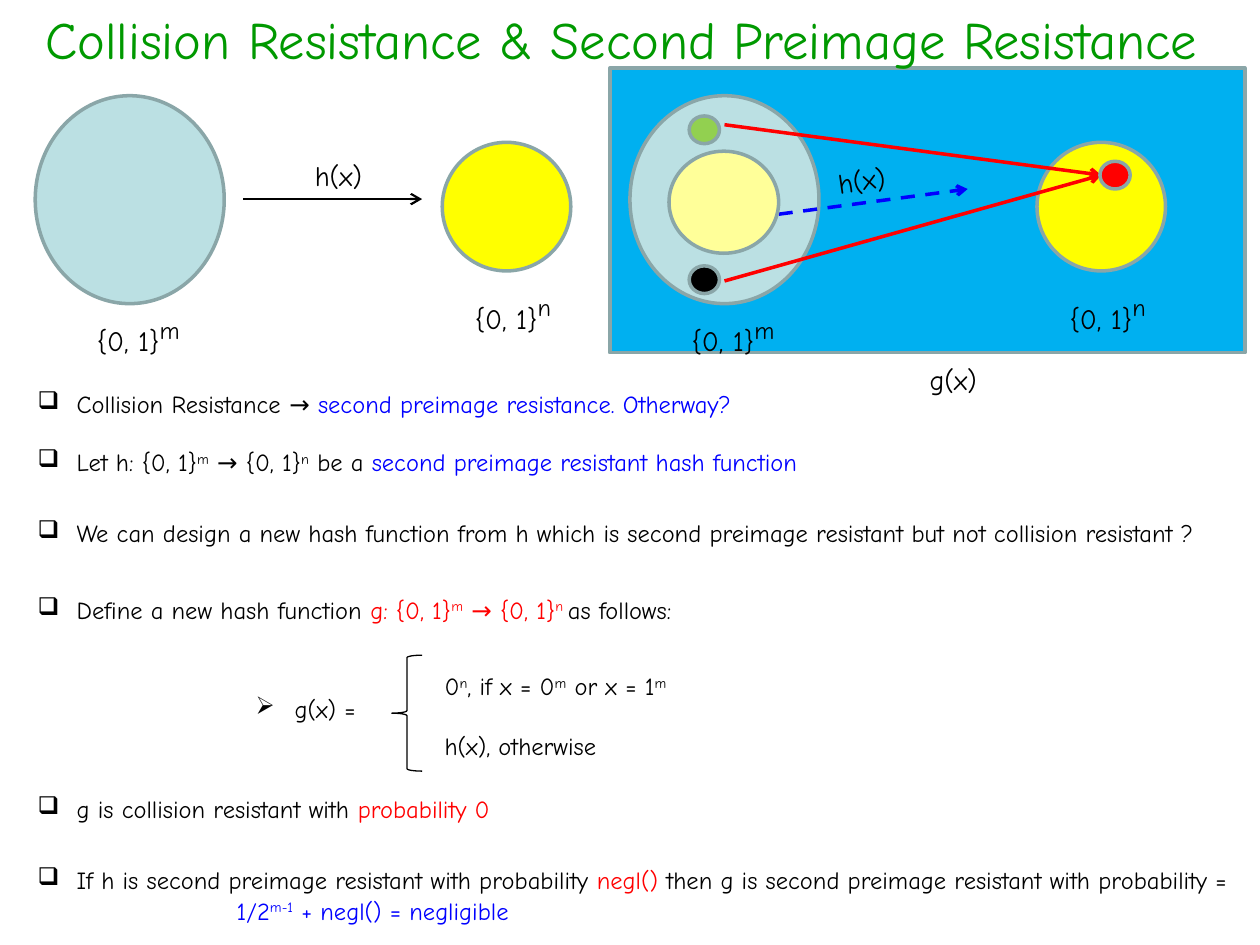
from lxml import etree
from pptx import Presentation
from pptx import util as u
from pptx.dml.color import RGBColor
from pptx.enum import dml, shapes, text
from pptx.oxml.ns import qn

color = RGBColor.from_string
BLACK, BLUE, RED, GREEN = "000000", "0000FF", "FF0000", "009900"
EDGE, PALE, YELLOW = "8AA6A8", "BBE0E3", "FFFF00"
OVAL = shapes.MSO_SHAPE.OVAL

deck = Presentation()
deck.slide_width, deck.slide_height = u.Inches(10), u.Inches(7.5)
page = deck.slides.add_slide(deck.slide_layouts[6])


def add_shape(kind, area, fill, edge=EDGE, width=2):
    shape = page.shapes.add_shape(kind, *map(u.Inches, area))
    shape.shadow.inherit = False
    if fill:
        shape.fill.solid()
        shape.fill.fore_color.rgb = color(fill)
    else:
        shape.fill.background()
    shape.line.color.rgb = color(edge)
    shape.line.width = u.Pt(width)


def add_text(area, parts, size=14, raised=None, bullet=None):
    """Parts are (wording, colour) pairs; wording between ^ marks is superscript."""
    box = page.shapes.add_textbox(*map(u.Inches, area))
    box.text_frame.word_wrap = True
    para = box.text_frame.paragraphs[0]
    if bullet:
        props = para._p.get_or_add_pPr()
        props.set("marL", str(u.Inches(0.31)))
        props.set("indent", str(-u.Inches(0.31)))
        etree.SubElement(props, qn("a:buChar")).set("char", bullet)
    for wording, tint in parts:
        for i, piece in enumerate(wording.split("^")):
            if not piece:
                continue
            span = para.add_run()
            span.text = piece
            is_raised = i % 2 == 1
            look = {"name": "Comic Neue", "size": u.Pt(raised if raised and is_raised else size)}
            for name, value in look.items():
                setattr(span.font, name, value)
            span.font.color.rgb = color(tint)
            if is_raised:
                span.font._element.set("baseline", "30000")
    return box


# Panel behind the diagram of g
add_shape(shapes.MSO_SHAPE.RECTANGLE, (4.84, 0.54, 5.04, 2.26), "00B0F0")

# Domain and range of h, and the same pair for g
for left in (0.28, 5):
    add_shape(OVAL, (left, 0.76, 1.5, 1.65), PALE)
    add_shape(OVAL, (left + 3.23, 1.13, 1.02, 1.02), YELLOW)
    add_text((left + 0.39, 2.41, 0.94, 0.37), [("{0, 1}^m^", BLACK)], 16, 24)
    add_text((left + 3.39, 2.23, 1.57, 0.37), [("{0, 1}^n^", BLACK)], 16, 24)

# Mapping arrows
arrows = [
    ((1.93, 1.58, 3.35, 1.58), BLACK, 1.25, None),
    ((5.75, 0.99, 8.74, 1.39), RED, 2, None),
    ((5.75, 2.23, 8.74, 1.39), RED, 2, None),
    ((6.18, 1.7, 7.68, 1.5), BLUE, 2, dml.MSO_LINE.DASH),
]
for ends, tint, width, dash in arrows:
    arrow = page.shapes.add_connector(shapes.MSO_CONNECTOR.STRAIGHT, *map(u.Inches, ends))
    arrow.line.color.rgb = color(tint)
    arrow.line.width = u.Pt(width)
    if dash:
        arrow.line.dash_style = dash
    etree.SubElement(arrow.line._get_or_add_ln(), qn("a:tailEnd")).set("type", "arrow")
    etree.SubElement(arrow._element.spPr, qn("a:effectLst"))

# Points inside the sets, and the inner domain
for left, top, fill in ((5.47, 2.11, BLACK), (5.47, 0.92, "92D050"), (8.73, 1.28, RED)):
    add_shape(OVAL, (left, top, 0.24, 0.22), fill)
add_shape(OVAL, (5.31, 1.2, 0.87, 0.81), "FFFF99")

# Function labels
for left, top, label, turn in ((2.4, 1.21, "h(x)", 0), (6.55, 1.22, "h(x)", -8.1),
                               (7.28, 2.83, "g(x)", 0)):
    add_text((left, top, 0.94, 0.37), [(label, BLACK)], 16).rotation = turn

# Title
title = add_text((0, 0.01, 10, 0.51),
                 [("Collision Resistance & Second Preimage Resistance ", GREEN)], 30)
title.text_frame.paragraphs[0].alignment = text.PP_ALIGN.CENTER

# Bulleted statements
statements = [
    (3.04, [("Collision Resistance → ", BLACK),
            ("second preimage resistance. Otherway?", BLUE)]),
    (3.5, [("Let h: {0, 1}^m^ → {0, 1}^n^ be a ", BLACK),
           ("second preimage resistant hash function", BLUE)]),
    (4.06, [("We can design a new hash function from h which is second preimage "
             "resistant but not collision resistant ?", BLACK)]),
    (4.67, [("Define a new hash function ", BLACK),
            ("g: {0, 1}^m^ → {0, 1}^n ^", RED), ("as follows:", BLACK)]),
    (6.25, [("g is collision resistant with ", BLACK), ("probability 0", RED)]),
    (6.82, [("If h is second preimage resistant with probability ", BLACK),
            ("negl() ", RED),
            ("then g is second preimage resistant with probability =", BLACK)]),
]
for top, parts in statements:
    add_text((0.2, top, 9.69, 0.34), parts, bullet="❑")
add_text((1.78, 7.06, 3.61, 0.34), [("1/2^m-1^ + negl() = negligible", BLUE)])

# Definition of g by cases
add_text((1.93, 5.46, 1.26, 0.34), [("g(x) =", BLACK)], bullet="➢")
add_shape(shapes.MSO_SHAPE.LEFT_BRACE, (3.11, 5.2, 0.24, 0.92), None, BLACK, 0.75)
for top, case in ((5.28, "0^n^, if x = 0^m^ or x = 1^m^"), (5.75, "h(x), otherwise")):
    add_text((3.43, top, 3.07, 0.34), [(case, BLACK)])

deck.save("out.pptx")
